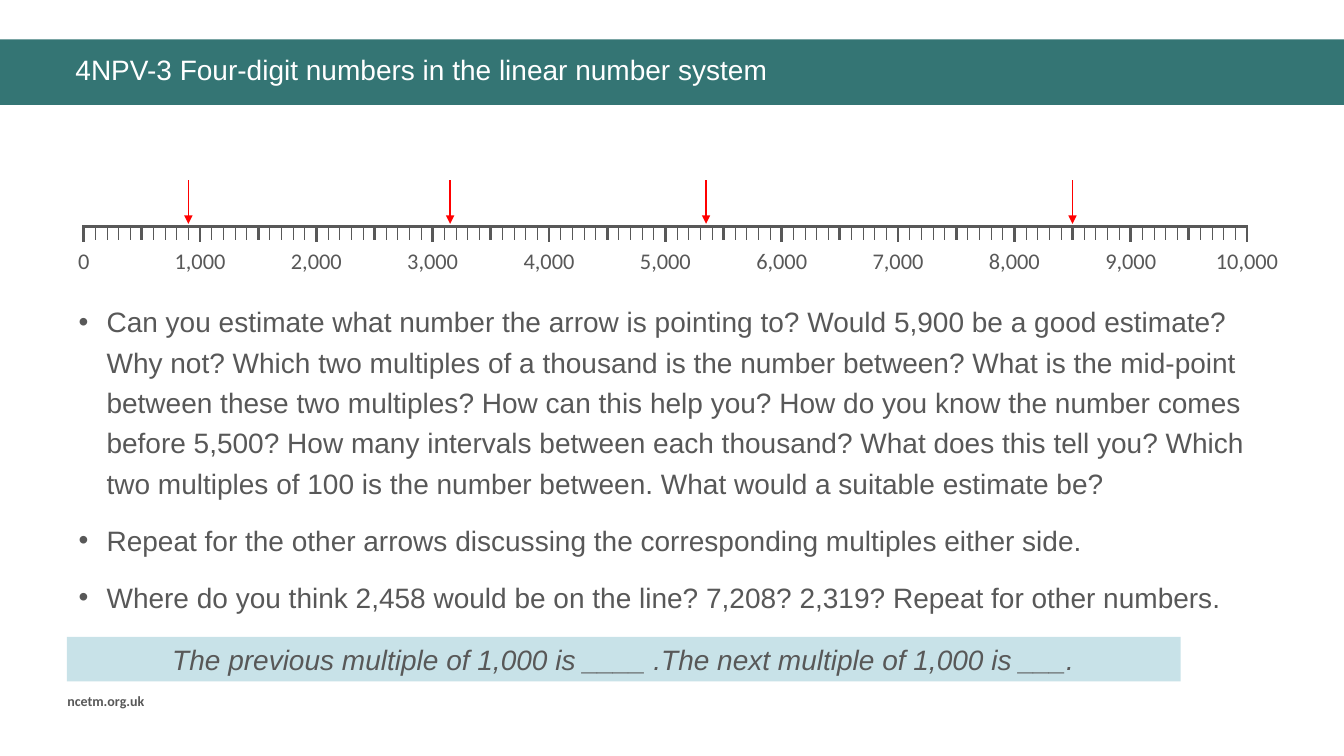
"""Build a slide about placing four-digit numbers on a number line."""
from lxml import etree
from pptx import Presentation
from pptx.dml.color import RGBColor
from pptx.enum.shapes import MSO_CONNECTOR, MSO_SHAPE
from pptx.enum.text import PP_ALIGN
from pptx.oxml.ns import qn
from pptx.util import Pt

STRAIGHT = MSO_CONNECTOR.STRAIGHT
RECT = MSO_SHAPE.RECTANGLE
LEFT, CENTER = PP_ALIGN.LEFT, PP_ALIGN.CENTER

GREY, TEAL, PALE, RED, WHITE = "585858", "347574", "C8E2E8", "FF0000", "FFFFFF"
TITLE = {"name": "Arial", "size": Pt(20)}
PROMPT = {**TITLE, "italic": True}
LABEL = {"name": "Calibri", "size": Pt(16)}
FOOT = {"name": "Calibri", "size": Pt(10), "bold": True}

START, STEP, AXIS = 59.76, 8.31, 161.6
ARROWS = (900, 3150, 5350, 8500)
TASKS = (
    "Can you estimate what number the arrow is pointing to? Would 5,900 be a good "
    "estimate? Why not? Which two multiples of a thousand is the number between? "
    "What is the mid-point between these two multiples? How can this help you? How "
    "do you know the number comes before 5,500? How many intervals between each "
    "thousand? What does this tell you? Which two multiples of 100 is the number "
    "between. What would a suitable estimate be?",
    "Repeat for the other arrows discussing the corresponding multiples either side.",
    "Where do you think 2,458 would be on the line? 7,208? 2,319? Repeat for other "
    "numbers.",
)


def paint(form, color):
    """Give a fill, line or font one solid colour."""
    if hasattr(form, "solid"):
        form.solid()
        form.fore_color.rgb = RGBColor.from_string(color)
    else:
        form.color.rgb = RGBColor.from_string(color)


def style(item, values):
    """Set each named attribute of an item."""
    for name, value in values.items():
        setattr(item, name, value)


def add_bar(slide, *box, color):
    """Add a plain rectangle with no outline."""
    bar = slide.shapes.add_shape(RECT, *map(Pt, box))
    bar.shadow.inherit = False
    paint(bar.fill, color)
    bar.line.fill.background()
    return bar


def write(para, text, font, color=GREY, align=LEFT, **layout):
    """Fill a paragraph with styled text."""
    para.text = text
    style(para, {"alignment": align, **layout})
    style(para.font, font)
    paint(para.font, color)


def add_text(slide, *box):
    """Add a wrapping text box and return its frame."""
    frame = slide.shapes.add_textbox(*map(Pt, box)).text_frame
    frame.word_wrap = True
    return frame


def add_line(slide, start, end, color, width, arrow=False):
    """Add a straight line, with an arrowhead at its end on request."""
    link = slide.shapes.add_connector(STRAIGHT, *map(Pt, start + end))
    paint(link.line, color)
    link.line.width = Pt(width)
    if arrow:
        line = link.line._get_or_add_ln()
        etree.SubElement(line, qn("a:tailEnd"), type="triangle")
    etree.SubElement(link._element.spPr, qn("a:effectLst"))


def place(value):
    """Return the horizontal position of a number on the line."""
    return START + value / 100 * STEP


def add_scale(slide):
    """Draw the axis with its ticks, labels and arrows."""
    add_line(slide, (START - 0.9, AXIS), (place(10000) + 0.9, AXIS), GREY, 2.25)
    for value in range(0, 10001, 100):
        x = place(value)
        drop = 172.8 if value % 1000 == 0 else 171.4
        width = 2 if value % 500 == 0 else 0.5
        add_line(slide, (x, AXIS), (x, drop), GREY, width)
        if value % 1000 == 0:
            frame = add_text(slide, x - 43.5, 172.8, 87, 26.6)
            write(frame.paragraphs[0], f"{value:,}", LABEL, align=CENTER)
    for value in ARROWS:
        x = place(value)
        add_line(slide, (x, 128.9), (x, 159.9), RED, 1, arrow=True)


def add_tasks(slide):
    """Add the bulleted questions."""
    frame = add_text(slide, 49, 209.5, 862.6, 234.7)
    for i, task in enumerate(TASKS):
        para = frame.add_paragraph() if i else frame.paragraphs[0]
        props = para._p.get_or_add_pPr()
        style_bits = {"marL": Pt(20), "indent": -Pt(20)}
        for name, value in style_bits.items():
            props.set(name, str(value))
        etree.SubElement(props, qn("a:buFont"), typeface="Arial")
        etree.SubElement(props, qn("a:buChar"), char="•")
        write(para, task, TITLE, line_spacing=1.2,
              space_before=Pt(6 if i else 0), space_after=Pt(6))


def main():
    """Build and save the slide."""
    deck = Presentation()
    style(deck, {"slide_width": Pt(960), "slide_height": Pt(540)})
    slide = deck.slides.add_slide(deck.slide_layouts[6])
    add_bar(slide, 0, 28.2, 960, 46.8, color=TEAL)
    title = add_text(slide, 46.8, 36.7, 887, 33.8)
    write(title.paragraphs[0], "4NPV-3 Four-digit numbers in the linear number system",
          TITLE, WHITE, line_spacing=0.9)
    foot = add_text(slide, 41, 491, 87, 19.4)
    write(foot.paragraphs[0], "ncetm.org.uk", FOOT)
    add_scale(slide)
    add_tasks(slide)
    prompt = add_bar(slide, 47.7, 455, 795.6, 31.7, color=PALE).text_frame
    write(prompt.paragraphs[0],
          "The previous multiple of 1,000 is ____ .The next multiple of 1,000 is ___.",
          PROMPT, align=CENTER)
    deck.save("out.pptx")


if __name__ == "__main__":
    main()
